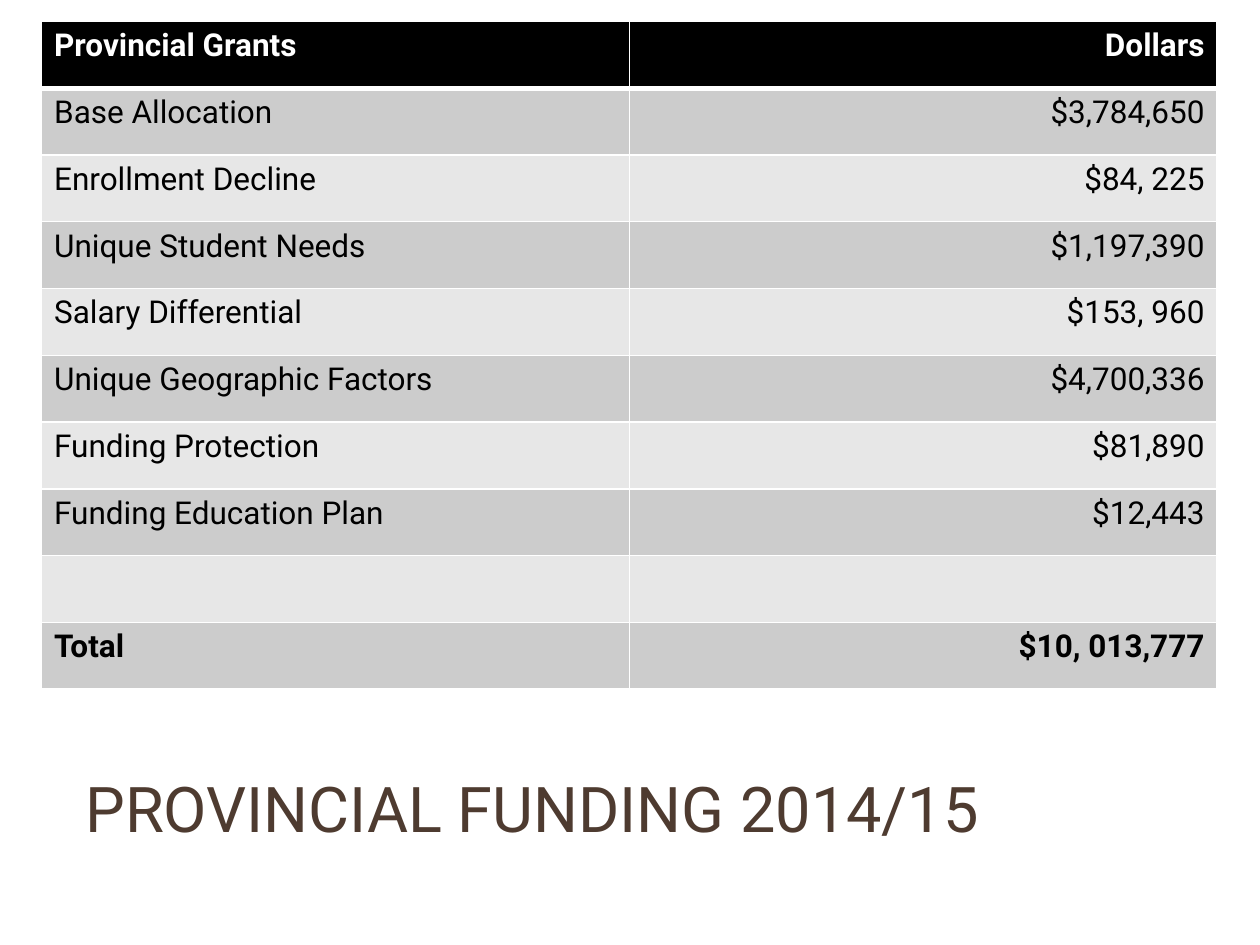
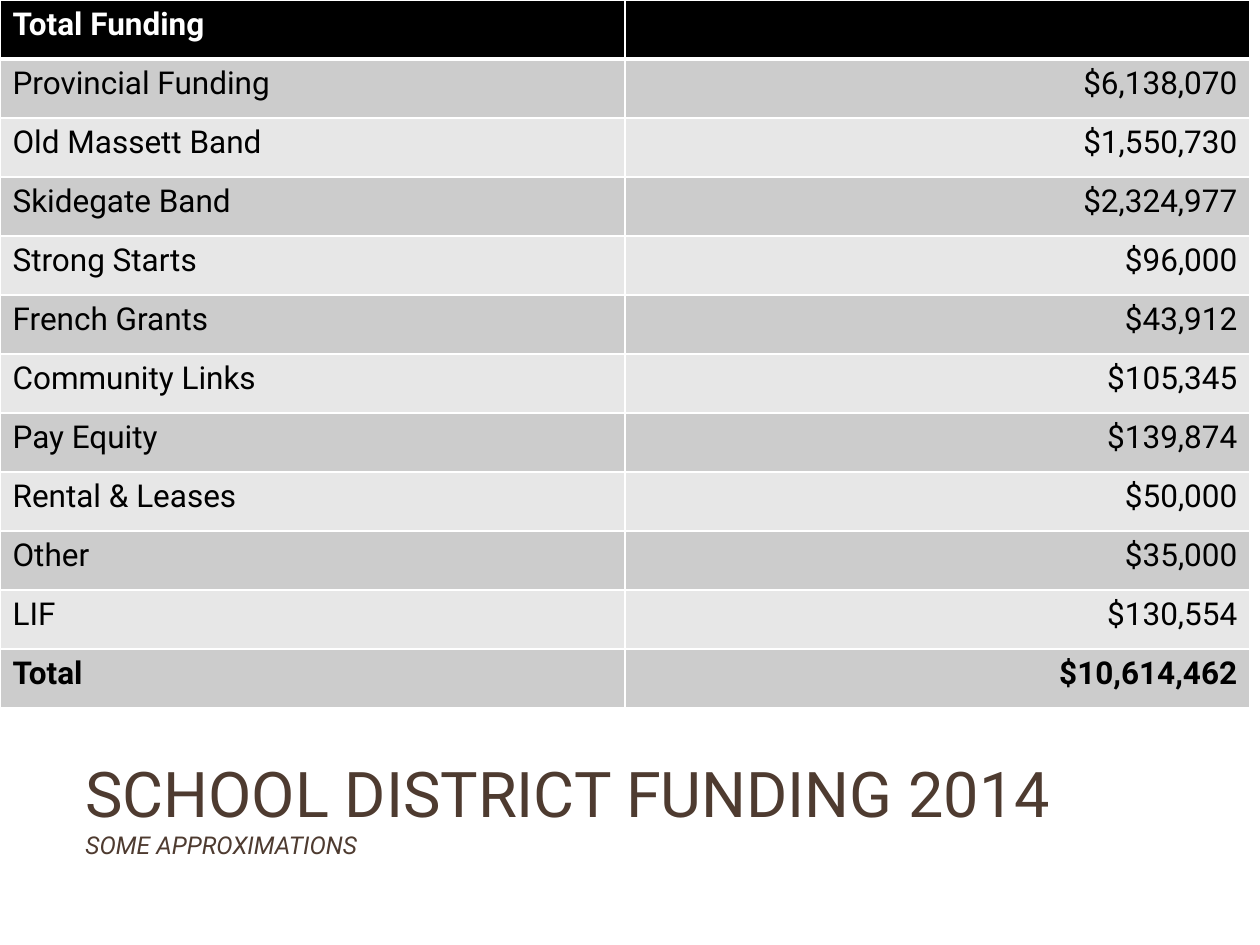
import pptx
import pptx.dml.color
import pptx.enum.text
import pptx.oxml
import pptx.oxml.ns
import pptx.util
from pptx.util import Inches

RGBColor = pptx.dml.color.RGBColor
BLACK = RGBColor(0x00, 0x00, 0x00)
WHITE = RGBColor(0xFF, 0xFF, 0xFF)
BROWN = RGBColor(0x4E, 0x3B, 0x30)
DARK_BAND = RGBColor(0xCC, 0xCC, 0xCC)
LIGHT_BAND = RGBColor(0xE7, 0xE7, 0xE7)
FONT = "Roboto"
LEFT = pptx.enum.text.PP_ALIGN.LEFT
RIGHT = pptx.enum.text.PP_ALIGN.RIGHT


def write(paragraph, text, size=18, color=BLACK, bold=False, italic=False, align=LEFT):
    paragraph.alignment = align
    run = paragraph.add_run()
    run.text = text
    run.font.name = FONT
    run.font.size = pptx.util.Pt(size)
    run.font.color.rgb = color
    run.font.bold = bold
    run.font.italic = italic


def add_borders(cell, **widths):
    """Draw white cell borders; widths in points, keyed L, R, T, B in that order."""
    for side, width in widths.items():
        cell._tc.get_or_add_tcPr().append(pptx.oxml.parse_xml(
            f'<a:ln{side} {pptx.oxml.ns.nsdecls("a")} w="{pptx.util.Pt(width)}">'
            f'<a:solidFill><a:srgbClr val="{WHITE}"/></a:solidFill></a:ln{side}>'))


provincial_grants = [
    ("Provincial Grants", "Dollars"),
    ("Base Allocation", "$3,784,650"),
    ("Enrollment Decline", "$84, 225"),
    ("Unique Student Needs", "$1,197,390"),
    ("Salary Differential", "$153, 960"),
    ("Unique Geographic Factors", "$4,700,336"),
    ("Funding Protection", "$81,890"),
    ("Funding Education Plan", "$12,443"),
    ("", ""),
    ("Total", "$10, 013,777"),
]
total_funding = [
    ("Total Funding", ""),
    ("Provincial Funding", "$6,138,070"),
    ("Old Massett Band", "$1,550,730"),
    ("Skidegate Band", "$2,324,977"),
    ("Strong Starts", "$96,000"),
    ("French Grants", "$43,912"),
    ("Community Links", "$105,345"),
    ("Pay Equity", "$139,874"),
    ("Rental & Leases", "$50,000"),
    ("Other", "$35,000"),
    ("LIF", "$130,554"),
    ("Total", "$10,614,462"),
]
# title, subtitle, table rows, table left, top, width, height
pages = [
    ("PROVINCIAL FUNDING 2014/15", "", provincial_grants, 0.33, 0.17, 9.33, 5.3),
    ("SCHOOL DISTRICT FUNDING 2014", "SOME APPROXIMATIONS", total_funding, 0, 0, 9.92, 5.62),
]

deck = pptx.Presentation()
deck.slide_width, deck.slide_height = Inches(10), Inches(7.5)

for title, subtitle, funding, *place in pages:
    slide = deck.slides.add_slide(deck.slide_layouts[6])

    heading = slide.shapes.add_textbox(
        Inches(0.58), Inches(5.92), Inches(9.42), Inches(0.97)).text_frame
    heading.word_wrap = True
    heading.vertical_anchor = pptx.enum.text.MSO_ANCHOR.MIDDLE
    write(heading.paragraphs[0], title, size=36, color=BROWN)
    if subtitle:
        heading.paragraphs[0].add_line_break()
        write(heading.paragraphs[0], subtitle, size=14, color=BROWN, italic=True)

    grid = slide.shapes.add_table(len(funding), 2, *map(Inches, place)).table
    for row, entry in enumerate(funding):
        is_header = row == 0
        band = BLACK if is_header else DARK_BAND if row % 2 else LIGHT_BAND
        for column, text in enumerate(entry):
            cell = grid.cell(row, column)
            add_borders(cell, L=1, R=1, T=3 if row == 1 else 1, B=3 if is_header else 1)
            cell.fill.solid()
            cell.fill.fore_color.rgb = band
            if text:
                write(cell.text_frame.paragraphs[0], text,
                      color=WHITE if is_header else BLACK,
                      bold=is_header or entry[0] == "Total",
                      align=RIGHT if column else LEFT)

deck.save("out.pptx")
